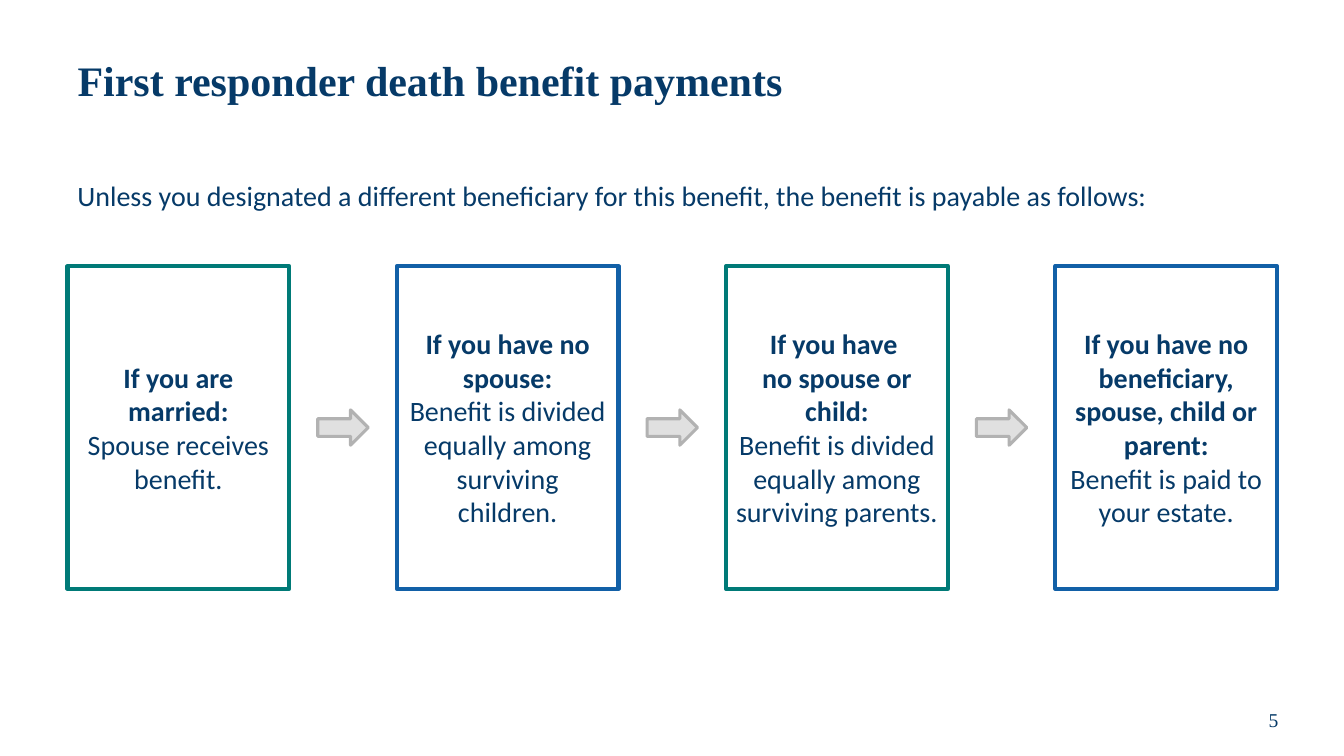
from lxml import etree
from pptx import Presentation
from pptx.dml.color import RGBColor
from pptx.enum import shapes, text
from pptx.oxml import ns
from pptx.util import Pt

NAVY = RGBColor(0x06, 0x3A, 0x68)
BLUE = RGBColor(0x12, 0x60, 0xA7)
TEAL = RGBColor(0x00, 0x7A, 0x77)
LIGHT_GREY = RGBColor(0xE0, 0xE0, 0xE0)
GREY = RGBColor(0xB2, 0xB2, 0xB2)

SERIF = "Times New Roman"
SANS = "Calibri"

MARGIN = 48.24
CARD_TOP, CARD_WIDTH, CARD_HEIGHT = 190.2, 158.4, 230.4
CARD_STEP = 235.2
ARROW_WIDTH, ARROW_HEIGHT = 36, 25.2

CASES = [
    ("If you are married:", "Spouse receives benefit."),
    ("If you have no spouse:",
     "Benefit is divided equally among surviving children."),
    ("If you have \vno spouse or child:",
     "Benefit is divided equally among surviving parents."),
    ("If you have no beneficiary, spouse, child or parent:",
     "Benefit is paid to your estate."),
]


def write(para, words, name, size, bold=False, align=text.PP_ALIGN.LEFT):
    para.text = words
    para.alignment = align
    para.font.name = name
    para.font.size = Pt(size)
    para.font.bold = bold
    para.font.color.rgb = NAVY


def place_title(page, words):
    title = page.shapes.title
    title.left, title.top = Pt(MARGIN), Pt(18)
    title.width, title.height = Pt(864), Pt(82.8)
    frame = title.text_frame
    frame.auto_size = text.MSO_AUTO_SIZE.NONE
    frame.vertical_anchor = text.MSO_ANCHOR.MIDDLE
    write(frame.paragraphs[0], words, SERIF, 30, bold=True)
    frame.paragraphs[0].line_spacing = 0.9


def add_text(page, left, top, width, height):
    box = page.shapes.add_textbox(Pt(left), Pt(top), Pt(width), Pt(height))
    box.text_frame.word_wrap = True
    return box.text_frame


def add_outlined(page, kind, left, top, width, height, color, weight):
    shape = page.shapes.add_shape(kind, Pt(left), Pt(top), Pt(width), Pt(height))
    shape.shadow.inherit = False
    shape.line.color.rgb = color
    shape.line.width = Pt(weight)
    return shape


def add_card(page, left, condition, payment, color):
    card = add_outlined(page, shapes.MSO_SHAPE.RECTANGLE, left, CARD_TOP,
                        CARD_WIDTH, CARD_HEIGHT, color, 3)
    card.fill.background()
    # Rounded outline corners
    etree.SubElement(card.line._get_or_add_ln(), ns.qn("a:round"))
    frame = card.text_frame
    frame.word_wrap = True
    frame.vertical_anchor = text.MSO_ANCHOR.MIDDLE
    frame.margin_left = frame.margin_right = Pt(7.2)
    frame.margin_top = frame.margin_bottom = Pt(7.2)
    center = text.PP_ALIGN.CENTER
    write(frame.paragraphs[0], condition, SANS, 20, bold=True, align=center)
    write(frame.add_paragraph(), payment, SANS, 20, align=center)


def add_arrow(page, card_left):
    gap = CARD_STEP - CARD_WIDTH
    left = card_left + CARD_WIDTH + (gap - ARROW_WIDTH) / 2
    top = CARD_TOP + (CARD_HEIGHT - ARROW_HEIGHT) / 2
    arrow = add_outlined(page, shapes.MSO_SHAPE.RIGHT_ARROW, left, top,
                         ARROW_WIDTH, ARROW_HEIGHT, GREY, 2.25)
    arrow.fill.solid()
    arrow.fill.fore_color.rgb = LIGHT_GREY


def main():
    deck = Presentation()
    deck.slide_width, deck.slide_height = Pt(960), Pt(540)
    page = deck.slides.add_slide(deck.slide_layouts[5])

    # Title and introduction
    place_title(page, "First responder death benefit payments")
    intro = add_text(page, MARGIN, 126.7, 864, 36).paragraphs[0]
    write(intro, "Unless you designated a different beneficiary for this "
          "benefit, the benefit is payable as follows:", SANS, 20)
    intro.line_spacing = 0.9

    # Chain of cases, with an arrow to each next one
    for index, (condition, payment) in enumerate(CASES):
        left = MARGIN + index * CARD_STEP
        add_card(page, left, condition, payment, BLUE if index % 2 else TEAL)
        if index < len(CASES) - 1:
            add_arrow(page, left)

    # Page number
    number = add_text(page, 867.6, 496.1, 84.2, 36)
    number.vertical_anchor = text.MSO_ANCHOR.MIDDLE
    write(number.paragraphs[0], "5", SERIF, 14, align=text.PP_ALIGN.CENTER)

    deck.save("out.pptx")


if __name__ == "__main__":
    main()
